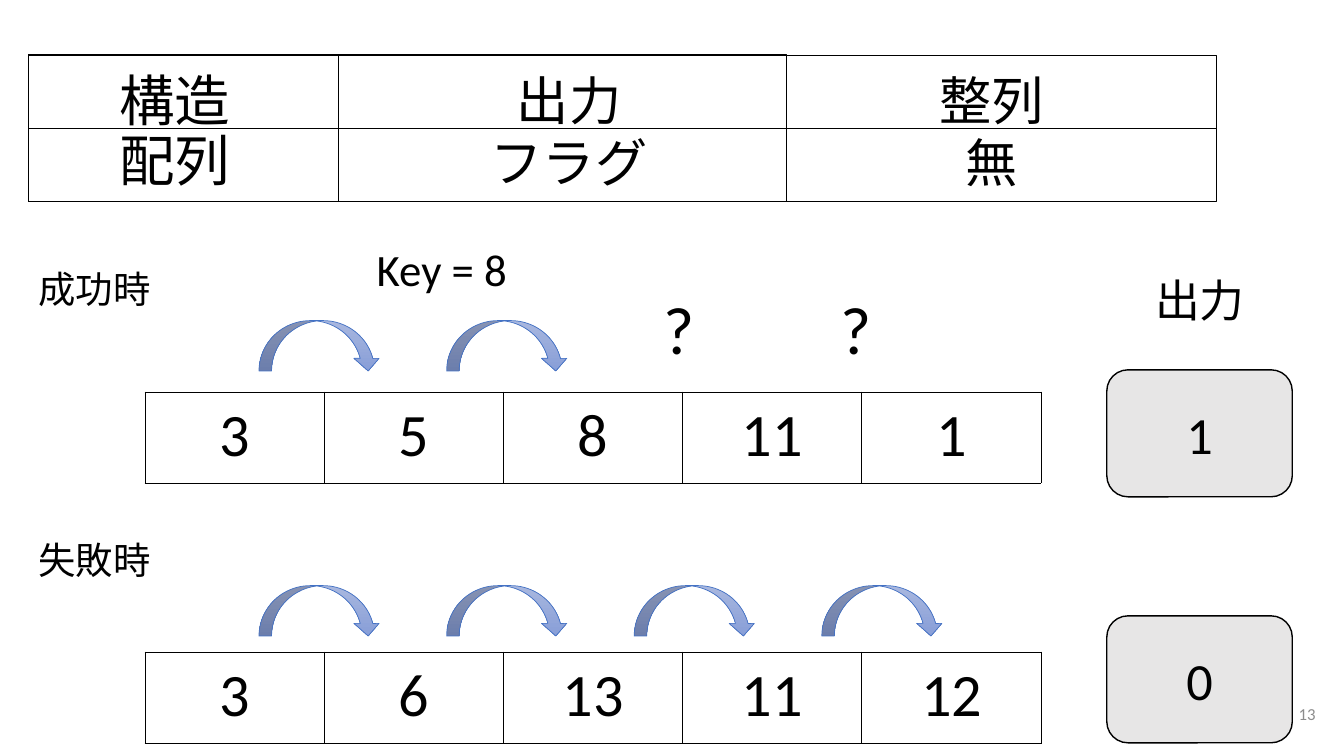
from pptx import Presentation
from pptx.dml.color import RGBColor
from pptx.enum import shapes as sh, text as tx
from pptx.oxml import parse_xml
from pptx.oxml.ns import nsdecls, qn
from pptx.util import Pt

INK = {"black": "000000", "gray": "E7E6E6", "page": "8C8C8C",
       "edge": "4472C4", "light": "A8B7DF", "deep": "889ED7"}
COLOR = {name: RGBColor.from_string(code) for name, code in INK.items()}
KIND = sh.MSO_SHAPE
MID = tx.PP_ALIGN.CENTER

deck = Presentation()
deck.slide_width, deck.slide_height = Pt(960), Pt(540)
slide = deck.slides.add_slide(deck.slide_layouts[5])
items = slide.shapes


def write(frame, words, size, align=None, font="Calibri", color="black", inset=None):
    """Fill a text frame, one paragraph for each line of words."""
    frame.word_wrap = True
    frame.auto_size = tx.MSO_AUTO_SIZE.NONE
    if inset is not None:
        frame.margin_left = frame.margin_right = Pt(inset)
        frame.margin_top = frame.margin_bottom = Pt(inset)
    frame.text = words
    for para in frame.paragraphs:
        para.alignment = align
        para.font.size, para.font.name = Pt(size), font
        para.font.color.rgb = COLOR[color]


def draw(kind, left, top, width, height, line=1, edge="black"):
    """Add an unfilled outlined shape."""
    shape = items.add_shape(kind, Pt(left), Pt(top), Pt(width), Pt(height))
    shape.shadow.inherit = False
    shape.fill.background()
    shape.line.color.rgb = COLOR[edge]
    shape.line.width = Pt(line)
    return shape


# Search runs: table top, arrow top, arrow count, result top, result, values
runs = [(280, 229, 2, 264.2, "1", ["3", "5", "8", "11", "1"]),
        (465.8, 418.3, 4, 439.9, "0", ["3", "6", "13", "11", "12"])]
for top, hop, count, spot, flag, values in runs:
    # Array cells
    table = items.add_table(1, len(values), Pt(103.7), Pt(top), Pt(640), Pt(65)).table
    table.first_row = table.horz_banding = False
    for cell, value in zip(table.iter_cells(), values):
        write(cell.text_frame, value, 43, MID)
        cell.margin_left = cell.margin_right = Pt(9.6)
        cell.margin_top = cell.margin_bottom = Pt(4.8)
        props = cell._tc.get_or_add_tcPr()
        for side in ("lnL", "lnR", "lnT", "lnB"):
            props.append(parse_xml(
                f'<a:{side} {nsdecls("a")} w="9525"><a:solidFill>'
                f'<a:srgbClr val="{INK["black"]}"/></a:solidFill></a:{side}>'))
        cell.fill.background()

    # Steps from cell to cell
    for step in range(count):
        arrow = draw(KIND.CURVED_DOWN_ARROW, 185 + 134 * step, hop, 87, 36, 0.5, "edge")
        arrow.fill.gradient()
        arrow.fill.gradient_angle = 270
        for stop, name in zip(arrow.fill.gradient_stops, ("light", "deep")):
            stop.color.rgb = COLOR[name]

    # Result flag
    box = draw(KIND.ROUNDED_RECTANGLE, 790.6, spot, 132.5, 90.7)
    box.fill.solid()
    box.fill.fore_color.rgb = COLOR["gray"]
    write(box.text_frame, flag, 37.3, MID)
    box.text_frame.vertical_anchor = tx.MSO_ANCHOR.MIDDLE

# Title column of the summary
title = items.title
title.left, title.top, title.width, title.height = Pt(20.2), Pt(45.4), Pt(209.5), Pt(60.5)
write(title.text_frame, "構造\v配列", 39.6, MID, inset=7.2)
title.text_frame.vertical_anchor = tx.MSO_ANCHOR.TOP
title.text_frame.paragraphs[0].line_spacing = 0.9

# Labels and the other summary columns
labels = [
    ("Key = 8", 262, 169.2, 137, 46, 32, None, "Calibri", "black", None),
    ("出力", 776.9, 191.5, 160.6, 46, 32, MID, "Calibri", "black", None),
    ("成功時", 20.2, 186.5, 188, 40, 26.7, None, "Calibri", "black", None),
    ("失敗時", 20.2, 380.2, 188, 40, 26.7, None, "Calibri", "black", None),
    ("?", 466.6, 201.6, 52.6, 65.5, 48, None, "Calibri", "black", None),
    ("?", 593.3, 201.6, 52.6, 65.5, 48, None, "Calibri", "black", None),
    ("出力\nフラグ", 250.6, 38.9, 311.8, 67, 37.3, MID, "Arial", "black", 9.6),
    ("整列\n無", 583.9, 38.9, 249.1, 60.5, 37.3, MID, "Arial", "black", 9.6),
    ("13", 889.2, 489.6, 57.6, 41, 12, tx.PP_ALIGN.RIGHT, "Calibri", "page", 7.2),
]
for words, left, top, width, height, *style in labels:
    label = items.add_textbox(Pt(left), Pt(top), Pt(width), Pt(height))
    write(label.text_frame, words, *style)
label.text_frame.vertical_anchor = tx.MSO_ANCHOR.MIDDLE  # page number

# Summary frame
draw(KIND.RECTANGLE, 20.2, 39.6, 848.9, 104.4)
rule = items.add_connector(sh.MSO_CONNECTOR.STRAIGHT, Pt(20.2), Pt(91.6), Pt(869.1), Pt(91.6))
rule.line.color.rgb = COLOR["black"]
rule.line.width = Pt(0.5)
rule._element.spPr.append(rule._element.makeelement(qn("a:effectLst"), {}))
for left, width in ((20.2, 221.8), (242, 319.7)):
    draw(KIND.RECTANGLE, left, 38.9, width, 105.1)

deck.save("out.pptx")
